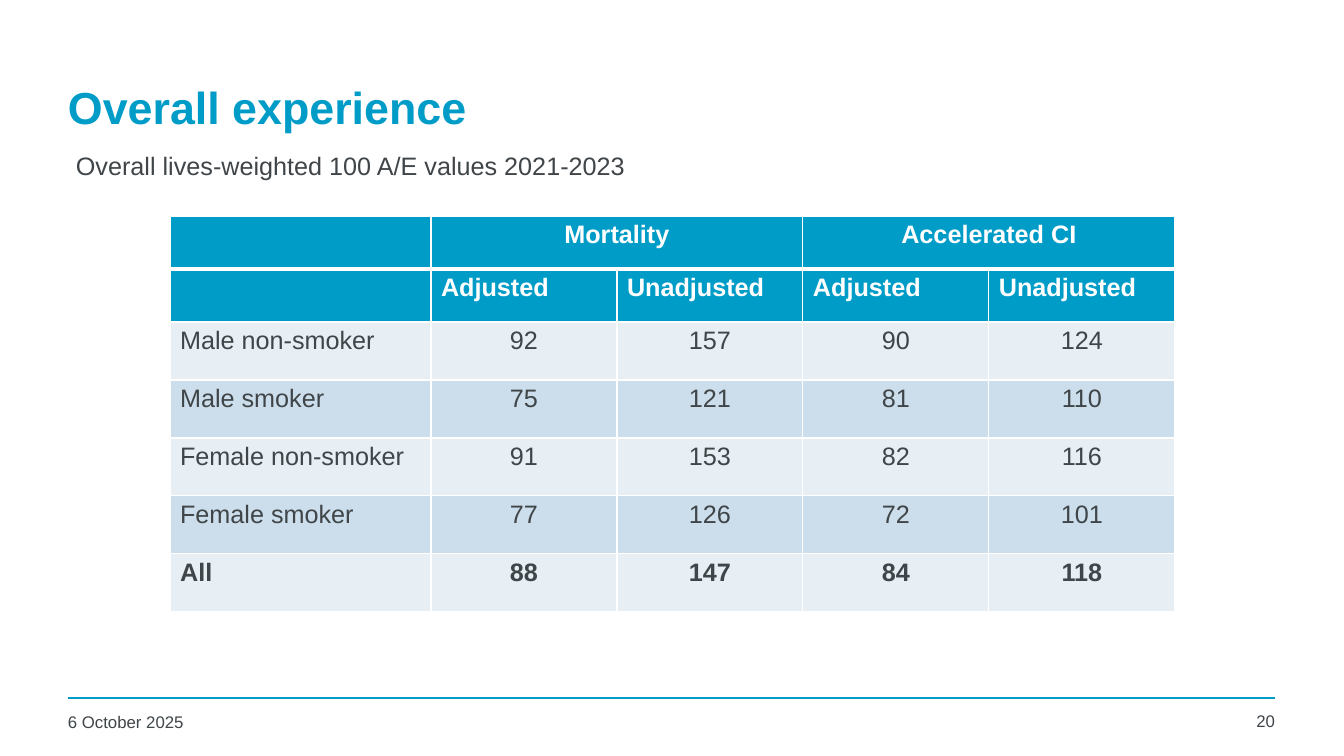
"""Build the overall experience slide with its A/E table."""
from lxml.etree import SubElement
from pptx import Presentation
from pptx.dml.color import RGBColor
from pptx.enum.shapes import MSO_CONNECTOR
from pptx.enum.text import MSO_ANCHOR, PP_ALIGN
from pptx.oxml import parse_xml
from pptx.oxml.ns import nsdecls, qn
from pptx.util import Emu, Pt

BLUE = RGBColor(0x00, 0x9C, 0xC8)
INK = RGBColor(0x3F, 0x45, 0x48)
WHITE = RGBColor(0xFF, 0xFF, 0xFF)
PALE = RGBColor(0xE7, 0xEF, 0xF5)
MID = RGBColor(0xCC, 0xDE, 0xEB)


def px(length):
    return Emu(round(length * 914400 / 100.8))


def write(frame, text, size, color, bold=False, align=PP_ALIGN.LEFT):
    paragraph = frame.paragraphs[0]
    paragraph.text = text
    paragraph.alignment = align
    font = paragraph.font
    font.name, font.size, font.bold = "Arial", Pt(size), bold
    font.color.rgb = color


deck = Presentation()
deck.slide_width, deck.slide_height = px(1344), px(756)
slide = deck.slides.add_slide(deck.slide_layouts[6])

footer_rule = slide.shapes.add_connector(
    MSO_CONNECTOR.STRAIGHT, px(68), px(698), px(1275), px(698))
footer_rule.line.color.rgb = BLUE
footer_rule.line.width = Pt(1)
SubElement(footer_rule._element.spPr, qn("a:effectLst"))

for text, box, size, color, bold, align, anchor in [
    ("Overall experience", (58, 44, 1219, 126), 32, BLUE, True, PP_ALIGN.LEFT, MSO_ANCHOR.MIDDLE),
    ("6 October 2025", (58, 707, 296, 36), 12, INK, False, PP_ALIGN.LEFT, MSO_ANCHOR.TOP),
    ("20", (1190, 706, 95, 37), 12, INK, False, PP_ALIGN.RIGHT, MSO_ANCHOR.TOP),
    ("Overall lives-weighted 100 A/E values 2021-2023", (66, 145, 669, 40), 18, INK, False,
     PP_ALIGN.LEFT, MSO_ANCHOR.TOP),
]:
    frame = slide.shapes.add_textbox(*map(px, box)).text_frame
    frame.word_wrap = True
    frame.vertical_anchor = anchor
    write(frame, text, size, color, bold, align)

experience = [
    ("", "Mortality", "", "Accelerated CI", ""),
    ("", "Adjusted", "Unadjusted", "Adjusted", "Unadjusted"),
    ("Male non-smoker", "92", "157", "90", "124"),
    ("Male smoker", "75", "121", "81", "110"),
    ("Female non-smoker", "91", "153", "82", "116"),
    ("Female smoker", "77", "126", "72", "101"),
    ("All", "88", "147", "84", "118"),
]
column_widths = [261] + [186] * 4
row_heights = [53] * 2 + [58] * 5
table = slide.shapes.add_table(
    len(row_heights), len(column_widths), px(170), px(216),
    px(sum(column_widths)), px(sum(row_heights))).table
for column, width in zip(table.columns, column_widths):
    column.width = px(width)
for row, height in zip(table.rows, row_heights):
    row.height = px(height)

for r, values in enumerate(experience):
    header = r < 2
    for c, value in enumerate(values):
        cell = table.cell(r, c)
        borders = {"lnL": 1, "lnR": 1, "lnT": 3 if r == 1 else 1, "lnB": 3 if r == 0 else 1}
        for side, points in borders.items():
            cell._tc.get_or_add_tcPr().append(parse_xml(
                f'<a:{side} {nsdecls("a")} w="{Pt(points)}"><a:solidFill>'
                f'<a:srgbClr val="{WHITE}"/></a:solidFill></a:{side}>'))
        cell.fill.solid()
        cell.fill.fore_color.rgb = BLUE if header else (PALE, MID)[r % 2]
        write(cell.text_frame, value, 18, WHITE if header else INK,
              header or values[0] == "All",
              PP_ALIGN.LEFT if c == 0 or r == 1 else PP_ALIGN.CENTER)

for c in (1, 3):
    table.cell(0, c).merge(table.cell(0, c + 1))

deck.save("out.pptx")
